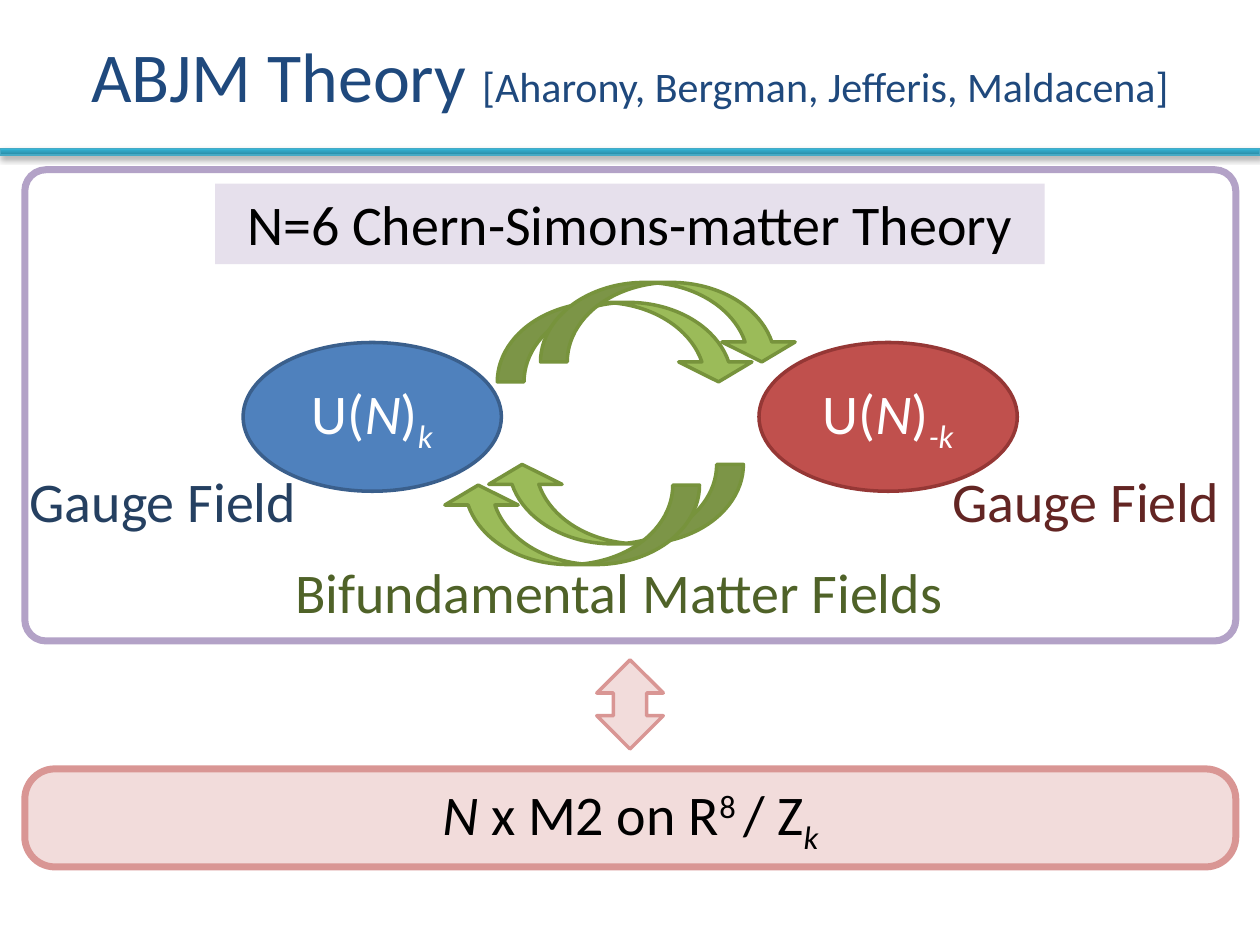
import pptx
import pptx.dml.color
import pptx.enum.shapes
import pptx.enum.text
import pptx.oxml
import pptx.oxml.ns
import pptx.util

Pt = pptx.util.Pt
RGBColor = pptx.dml.color.RGBColor
SHAPE = pptx.enum.shapes.MSO_SHAPE
CENTER = pptx.enum.text.PP_ALIGN.CENTER
LEFT = pptx.enum.text.PP_ALIGN.LEFT
MIDDLE = pptx.enum.text.MSO_ANCHOR.MIDDLE
AUTO_SIZE = pptx.enum.text.MSO_AUTO_SIZE

BLACK = RGBColor(0x00, 0x00, 0x00)
WHITE = RGBColor(0xFF, 0xFF, 0xFF)
NAVY = RGBColor(0x1F, 0x49, 0x7D)
TEAL_DARK = RGBColor(0x2A, 0x88, 0xA2)
TEAL_LIGHT = RGBColor(0x34, 0xB4, 0xD6)
TEAL_LINE = RGBColor(0x46, 0xAA, 0xC5)
BLUE = RGBColor(0x4F, 0x81, 0xBD)
BLUE_LINE = RGBColor(0x3A, 0x5F, 0x8C)
BLUE_TEXT = RGBColor(0x25, 0x40, 0x61)
RED = RGBColor(0xC0, 0x50, 0x4D)
RED_LINE = RGBColor(0x95, 0x37, 0x35)
RED_TEXT = RGBColor(0x63, 0x25, 0x23)
PINK = RGBColor(0xF2, 0xDC, 0xDB)
PINK_LINE = RGBColor(0xD9, 0x96, 0x94)
GREEN = RGBColor(0x9B, 0xBB, 0x59)
GREEN_LINE = RGBColor(0x77, 0x93, 0x3C)
GREEN_TEXT = RGBColor(0x4F, 0x62, 0x28)
LILAC = RGBColor(0xE6, 0xE0, 0xEC)
LILAC_LINE = RGBColor(0xB3, 0xA2, 0xC7)

SUPERSCRIPT, SUBSCRIPT = 30, -25


class SlideBuilder:
    font_name = "Calibri"
    text_size = 32

    def __init__(self, slide):
        self.slide = slide

    def set_text(self, text_frame, runs, color, align=CENTER):
        """Fill the first paragraph from (text, italic, baseline percent) runs."""
        paragraph = text_frame.paragraphs[0]
        paragraph.alignment = align
        paragraph.font.name = self.font_name
        paragraph.font.size = Pt(self.text_size)
        paragraph.font.color.rgb = color
        for text, italic, baseline in runs:
            run = paragraph.add_run()
            run.text = text
            if italic:
                run.font.italic = True
            if baseline:
                run._r.get_or_add_rPr().set("baseline", str(baseline * 1000))

    def title(self, name, authors):
        title = self.slide.shapes.title
        title.left, title.top, title.width, title.height = 0, 0, Pt(720), Pt(85)
        title.text_frame.auto_size = AUTO_SIZE.NONE
        title.text_frame.vertical_anchor = MIDDLE
        paragraph = title.text_frame.paragraphs[0]
        paragraph.alignment = CENTER
        paragraph.font.name = self.font_name
        paragraph.font.color.rgb = NAVY
        for text, size in ((name, 40), (authors, 24)):
            run = paragraph.add_run()
            run.text = text
            run.font.size = Pt(size)

    def shape(self, kind, box, fill, line, line_width, adjustments=(),
              runs=(), color=BLACK, group=None):
        shapes = (group or self.slide).shapes
        shape = shapes.add_shape(kind, *(Pt(length) for length in box))
        shape.shadow.inherit = False
        for index, value in enumerate(adjustments):
            shape.adjustments[index] = value
        if fill is None:
            shape.fill.background()
        else:
            shape.fill.solid()
            shape.fill.fore_color.rgb = fill
        shape.line.color.rgb = line
        shape.line.width = Pt(line_width)
        if runs:
            shape.text_frame.vertical_anchor = MIDDLE
            self.set_text(shape.text_frame, runs, color)
        return shape

    def divider(self, top, height):
        """Full-width gradient bar with a soft shadow below it."""
        bar = self.shape(SHAPE.RECTANGLE, (0, top, 720, height), TEAL_DARK, TEAL_LINE, 0.75)
        bar.fill.gradient()
        bar.fill.gradient_angle = 90
        for stop, color in zip(bar.fill.gradient_stops, (TEAL_DARK, TEAL_LIGHT)):
            stop.color.rgb = color
        effects = bar._element.spPr.find(pptx.oxml.ns.qn("a:effectLst"))
        effects.append(pptx.oxml.parse_xml(
            f'<a:outerShdw {pptx.oxml.ns.nsdecls("a")} blurRad="{Pt(3.1)}" dist="{Pt(1.8)}" '
            'dir="5400000" rotWithShape="0"><a:srgbClr val="000000">'
            '<a:alpha val="35000"/></a:srgbClr></a:outerShdw>'))

    def label(self, text, box, color, align=LEFT, fill=None):
        label = self.slide.shapes.add_textbox(*(Pt(length) for length in box))
        label.text_frame.word_wrap = False
        label.text_frame.auto_size = AUTO_SIZE.SHAPE_TO_FIT_TEXT
        if fill is not None:
            label.fill.solid()
            label.fill.fore_color.rgb = fill
        self.set_text(label.text_frame, [(text, False, 0)], color, align)

    def arrow_pair(self, positions, rotation):
        group = self.slide.shapes.add_group_shape()
        for left, top in positions:
            arrow = self.shape(SHAPE.CURVED_DOWN_ARROW, (left, top, 147.4, 45.4), GREEN,
                               GREEN_LINE, 2, (0.337, 0.922, 0.25), group=group)
            arrow.rotation = rotation


def main():
    presentation = pptx.Presentation()
    presentation.slide_width, presentation.slide_height = Pt(720), Pt(540)
    builder = SlideBuilder(presentation.slides.add_slide(presentation.slide_layouts[5]))

    builder.title("ABJM Theory ", "[Aharony, Bergman, Jefferis, Maldacena]")
    builder.divider(85, 3.6)

    builder.shape(SHAPE.ROUNDED_RECTANGLE, (14.2, 439.4, 692, 56), PINK, PINK_LINE, 4, (0.307,),
                  [("N", True, 0), (" x M2 on R", False, 0), ("8 ", False, SUPERSCRIPT),
                   ("/ Z", False, 0), ("k", True, SUBSCRIPT)])
    builder.shape(SHAPE.ROUNDED_RECTANGLE, (14.2, 97, 692, 269.3), None, LILAC_LINE, 4, (0.045,))

    for left, fill, line, level in ((433.7, RED, RED_LINE, "-k"), (138.9, BLUE, BLUE_LINE, "k")):
        builder.shape(SHAPE.OVAL, (left, 195.7, 147.6, 85), fill, line, 2, color=WHITE,
                      runs=[("U(", False, 0), ("N", True, 0), (")", False, 0),
                            (level, True, SUBSCRIPT)])

    builder.arrow_pair([(284.2, 172.8), (308.9, 161.4)], 0)
    builder.arrow_pair([(277.4, 265.4), (252.3, 277.2)], 180)

    builder.label("Gauge Field", (9.8, 263, 168.5, 46), BLUE_TEXT)
    builder.label("Gauge Field", (537.1, 263, 168.5, 46), RED_TEXT)
    builder.label("Bifundamental Matter Fields", (161.5, 314.8, 389.5, 46), GREEN_TEXT)
    builder.label("N=6 Chern-Simons-matter Theory", (123, 105, 474, 46), BLACK, CENTER, LILAC)

    builder.shape(SHAPE.UP_DOWN_ARROW, (341, 377, 38, 51), PINK, PINK_LINE, 2)

    presentation.save("out.pptx")


if __name__ == "__main__":
    main()
